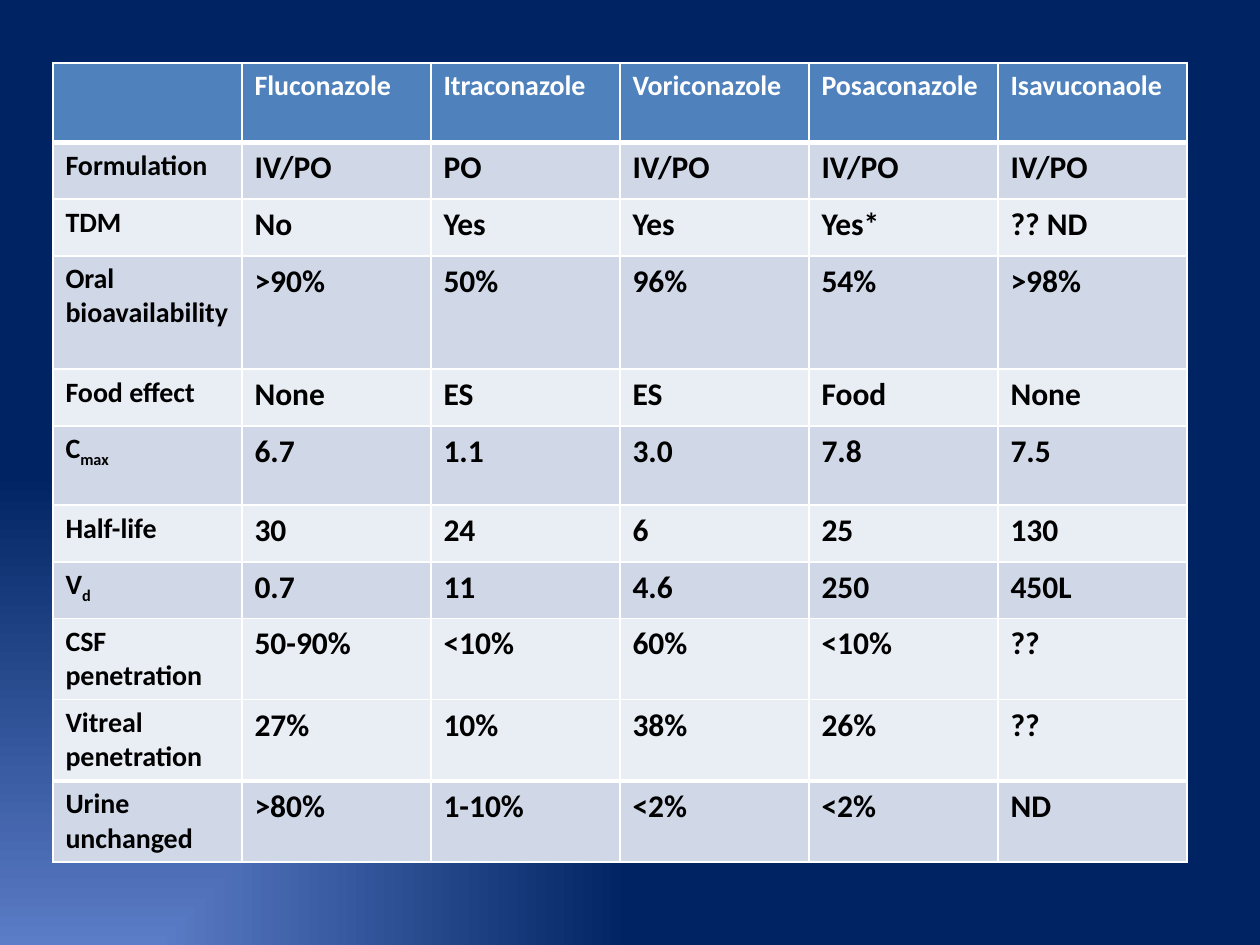
"""Build a slide with a table comparing the pharmacology of azole antifungals."""
import pptx
import pptx.dml.color
import pptx.oxml
import pptx.oxml.ns
import pptx.util

Inches = pptx.util.Inches
qn = pptx.oxml.ns.qn

COLORS = {
    "glow": "5B7CC6", "navy": "002463", "header": "4F81BD", "dark": "D0D8E8",
    "light": "E9EDF4", "white": "FFFFFF", "black": "000000",
}
HEADER = ["", "Fluconazole", "Itraconazole", "Voriconazole", "Posaconazole", "Isavuconaole"]
ROWS = [
    (0.63, "header", HEADER),
    (0.45, "dark", ["Formulation", "IV/PO", "PO", "IV/PO", "IV/PO", "IV/PO"]),
    (0.45, "light", ["TDM", "No", "Yes", "Yes", "Yes*", "?? ND"]),
    (0.9, "dark", ["Oral bioavailability", ">90%", "50%", "96%", "54%", ">98%"]),
    (0.45, "light", ["Food effect", "None", "ES", "ES", "Food", "None"]),
    (0.63, "dark", [("C", "max"), "6.7", "1.1", "3.0", "7.8", "7.5"]),
    (0.45, "light", ["Half-life", "30", "24", "6", "25", "130"]),
    (0.45, "dark", [("V", "d"), "0.7", "11", "4.6", "250", "450L"]),
    (0.63, "light", ["CSF penetration", "50-90%", "<10%", "60%", "<10%", "??"]),
    (0.63, "light", ["Vitreal penetration", "27%", "10%", "38%", "26%", "??"]),
    (0.63, "dark", ["Urine unchanged", ">80%", "1-10%", "<2%", "<2%", "ND"]),
]
LEFT, TOP, COL_WIDTH = 0.42, 0.5, 1.5
THIN, THICK = 1, 3
NS = pptx.oxml.ns.nsdecls("a")


def rgb(name):
    return pptx.dml.color.RGBColor.from_string(COLORS[name])


def paint_background(slide):
    fill = slide.background.fill
    fill.gradient()
    for stop, name in zip(fill.gradient_stops, ("glow", "navy")):
        stop.color.rgb = rgb(name)
    grad = slide.element.find(".//" + qn("a:gradFill"))
    grad.replace(grad.find(qn("a:lin")), pptx.oxml.parse_xml(
        f'<a:path {NS} path="rect"><a:fillToRect t="100000" r="100000"/></a:path>'))


def set_borders(cell, top, bottom):
    tc_pr = cell._tc.get_or_add_tcPr()
    for side, width in {"L": THIN, "R": THIN, "T": top, "B": bottom}.items():
        tc_pr.append(pptx.oxml.parse_xml(
            f'<a:ln{side} {NS} w="{pptx.util.Pt(width)}"><a:solidFill>'
            f'<a:srgbClr val="{COLORS["white"]}"/></a:solidFill></a:ln{side}>'))


def write_cell(cell, text, size, color):
    parts = text if isinstance(text, tuple) else (text,)
    p = cell.text_frame.paragraphs[0]
    for i, part in enumerate(filter(None, parts)):
        r = p.add_run()
        r.text = part
        for key, value in {"name": "Calibri", "size": pptx.util.Pt(size), "bold": True}.items():
            setattr(r.font, key, value)
        r.font.color.rgb = rgb(color)
        if i:
            r.font._element.set("baseline", "-25000")


def add_drug_table(slide):
    width = COL_WIDTH * len(HEADER)
    height = sum(row[0] for row in ROWS)
    table = slide.shapes.add_table(
        len(ROWS), len(HEADER), Inches(LEFT), Inches(TOP), Inches(width), Inches(height)).table
    for column in table.columns:
        column.width = Inches(COL_WIDTH)
    last = len(ROWS) - 1
    for i, (row_height, fill, texts) in enumerate(ROWS):
        table.rows[i].height = Inches(row_height)
        top = THICK if i in (1, last) else THIN
        bottom = THICK if i in (0, last - 1) else THIN
        for j, text in enumerate(texts):
            cell = table.cell(i, j)
            set_borders(cell, top, bottom)
            cell.fill.solid()
            cell.fill.fore_color.rgb = rgb(fill)
            write_cell(cell, text, 18 if i and j else 16, "black" if i else "white")


def main():
    prs = pptx.Presentation()
    prs.slide_width, prs.slide_height = Inches(10), Inches(7.5)
    slide = prs.slides.add_slide(prs.slide_layouts[6])
    paint_background(slide)
    add_drug_table(slide)
    prs.save("out.pptx")


if __name__ == "__main__":
    main()
